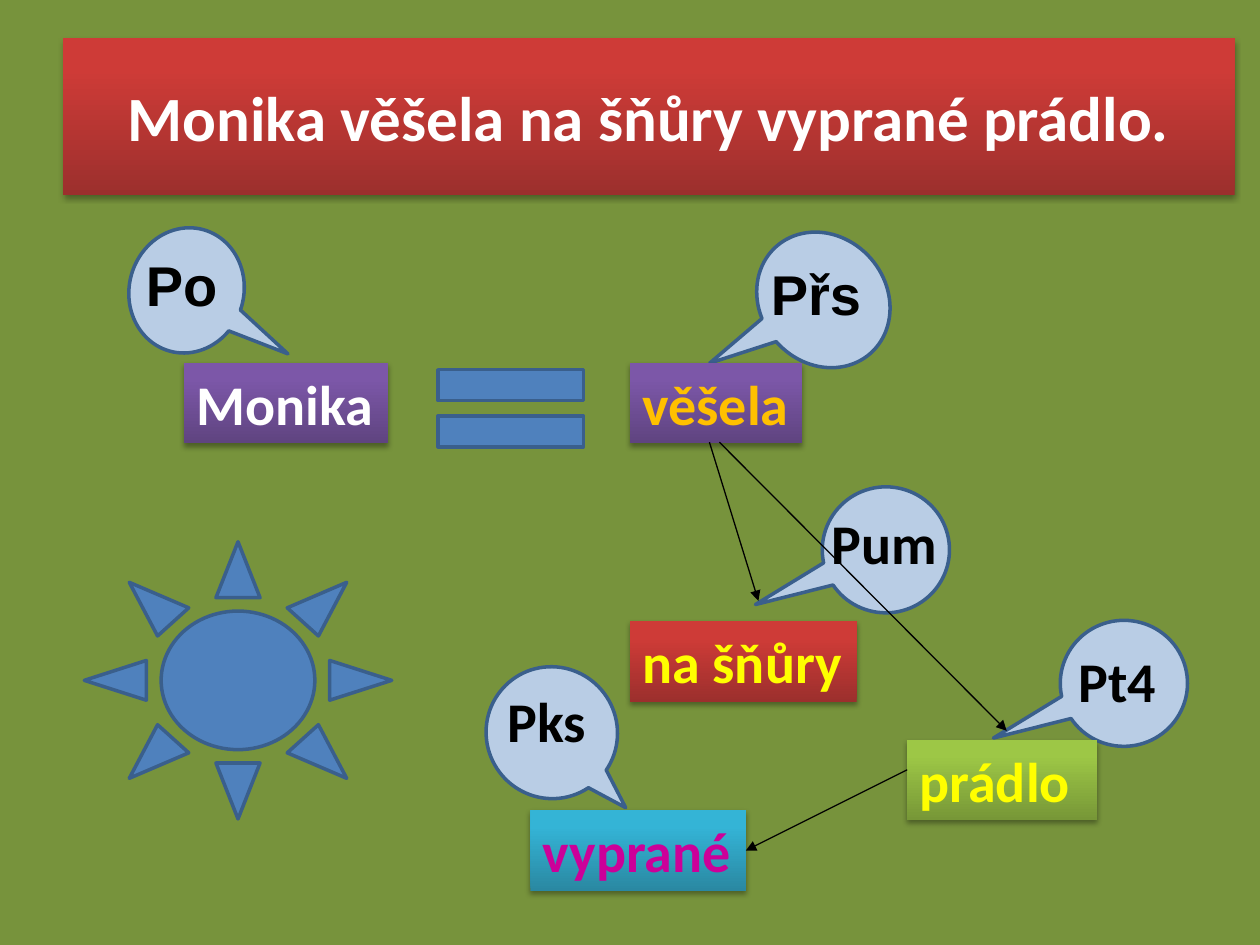
from dataclasses import dataclass

from lxml import etree
from pptx import Presentation
from pptx.dml.color import RGBColor
from pptx.enum.shapes import MSO_CONNECTOR, MSO_SHAPE as Preset
from pptx.enum.text import MSO_ANCHOR as Anchor, PP_ALIGN as Align
from pptx.oxml import parse_xml
from pptx.oxml.ns import nsdecls, qn
from pptx.util import Pt


@dataclass(frozen=True)
class Theme:
    background: str = "77933C"
    callout: str = "B9CDE5"
    drawing: str = "4F81BD"
    outline: str = "3A5F8C"
    black: str = "000000"
    white: str = "FFFFFF"
    gold: str = "FFC000"
    yellow: str = "FFFF00"
    magenta: str = "CC0099"
    # Gradients run from the dark bottom to the light top
    red: tuple = ("9C2F2D", "CE3B37")
    purple: tuple = ("5F4480", "7C57A8")
    teal: tuple = ("2A88A2", "34B4D6")
    green: tuple = ("779737", "9DC746")
    title_size: int = 36
    word_size: int = 32
    font: str = "Calibri"
    label_font: str = "Arial"


theme = Theme()
WORD_HEIGHT = 46
SHADOW = (
    f'<a:effectLst {nsdecls("a")}>'
    '<a:outerShdw blurRad="40000" dist="23000" dir="5400000" rotWithShape="0">'
    '<a:srgbClr val="000000"><a:alpha val="35000"/></a:srgbClr>'
    '</a:outerShdw></a:effectLst>'
)

deck = Presentation()
deck.slide_width, deck.slide_height = Pt(720), Pt(540)
page = deck.slides.add_slide(deck.slide_layouts[6])
page.background.fill.solid()
page.background.fill.fore_color.rgb = RGBColor.from_string(theme.background)


def add_outlined(preset, bounds, color):
    shape = page.shapes.add_shape(preset, *map(Pt, bounds))
    shape.shadow.inherit = False
    shape.fill.solid()
    shape.fill.fore_color.rgb = RGBColor.from_string(color)
    shape.line.color.rgb = RGBColor.from_string(theme.outline)
    shape.line.width = Pt(2)
    return shape


def write(box, text, color, size=theme.word_size, font=theme.font, align=Align.LEFT):
    frame = box.text_frame
    frame.word_wrap = False
    para = frame.paragraphs[0]
    para.text = text
    para.alignment = align
    para.font.name, para.font.size, para.font.bold = font, Pt(size), True
    para.font.color.rgb = RGBColor.from_string(color)


# Speech bubbles: bounds, rotation, pointer, mirrored
bubbles = [
    ((606.2, 354.2, 72, 72.7), 266.5, (0.37, -1.05), True),
    ((470.2, 277.9, 72, 72.7), 266.5, (0.37, -1.05), True),
    ((70.6, 133.2, 72, 65.5), 285.5, (-0.27, 1), False),
    ((429.8, 135.4, 81.4, 72), 48.9, (-0.19, 1.01), False),
    ((277.9, 380.9, 74.9, 75.6), 326.9, (0.16, 0.78), False),
]
for bounds, rotation, pointer, mirrored in bubbles:
    bubble = add_outlined(Preset.OVAL_CALLOUT, bounds, theme.callout)
    bubble.rotation = rotation
    bubble.adjustments[0], bubble.adjustments[1] = pointer
    if mirrored:
        bubble._element.spPr.find(qn("a:xfrm")).set("flipH", "1")

# Sentence and its word boxes
plates = [
    ("Monika věšela na šňůry vyprané prádlo.", (36, 21.6, 669.6, 90), theme.red, theme.white),
    ("Monika", (105.1, 207.4, 116.6, WORD_HEIGHT), theme.purple, theme.white),
    ("věšela", (360, 207.4, 98.6, WORD_HEIGHT), theme.purple, theme.gold),
    ("vyprané", (303.1, 463, 123.1, WORD_HEIGHT), theme.teal, theme.magenta),
    ("na šňůry", (360, 355, 129.6, WORD_HEIGHT), theme.red, theme.yellow),
    ("prádlo", (518.4, 422.6, 108.7, WORD_HEIGHT), theme.green, theme.yellow),
]
plate_by_text = {}
for text, bounds, gradient, color in plates:
    plate = page.shapes.add_shape(Preset.RECTANGLE, *map(Pt, bounds))
    plate.line.fill.background()
    plate.fill.gradient()
    plate.fill.gradient_angle = 90
    for stop, shade, position in zip(plate.fill.gradient_stops, gradient, (0, 0.8)):
        stop.color.rgb = RGBColor.from_string(shade)
        stop.position = position
    plate._element.spPr.append(parse_xml(SHADOW))
    plate.text_frame.vertical_anchor = Anchor.MIDDLE
    if bounds[3] == WORD_HEIGHT:
        write(plate, text, color)
    else:
        write(plate, text, color, theme.title_size, align=Align.CENTER)
    plate_by_text[text] = plate

# Sentence-part labels
labels = [
    ("Přs", 433.4, 144.7, 67, theme.label_font),
    ("Po", 76.3, 139.7, 56.2, theme.label_font),
    ("Pum", 468, 287.3, 75.6, theme.font),
    ("Pks", 283, 388.8, 59.8, theme.font),
    ("Pt4", 609.1, 365.8, 59.8, theme.font),
]
for text, left, top, width, font in labels:
    label = page.shapes.add_textbox(Pt(left), Pt(top), Pt(width), Pt(WORD_HEIGHT))
    write(label, text, theme.black, font=font)

# Dependency arrows
arrows = [
    ((405.4, 252.7), (433.4, 343.4), None),
    ((411.1, 252.7), (575.3, 417.6), None),
    ((518.4, 439.9), (426.2, 486), "vyprané"),
]
for start, end, target in arrows:
    arrow = page.shapes.add_connector(MSO_CONNECTOR.STRAIGHT, *map(Pt, start + end))
    if target:
        arrow.end_connect(plate_by_text[target], 3)
    arrow.line.color.rgb = RGBColor.from_string(theme.black)
    arrow.line.width = Pt(0.75)
    etree.SubElement(arrow.line._get_or_add_ln(), qn("a:tailEnd"), type="triangle")
    etree.SubElement(arrow._element.spPr, qn("a:effectLst"))

# Equals sign and sun
equals = add_outlined(Preset.MATH_EQUAL, (235.4, 196.6, 113, 73.4), theme.drawing)
equals.adjustments[0], equals.adjustments[1] = 0.24, 0.12
add_outlined(Preset.SUN, (48.2, 309.6, 175.7, 158.4), theme.drawing)

deck.save("out.pptx")
